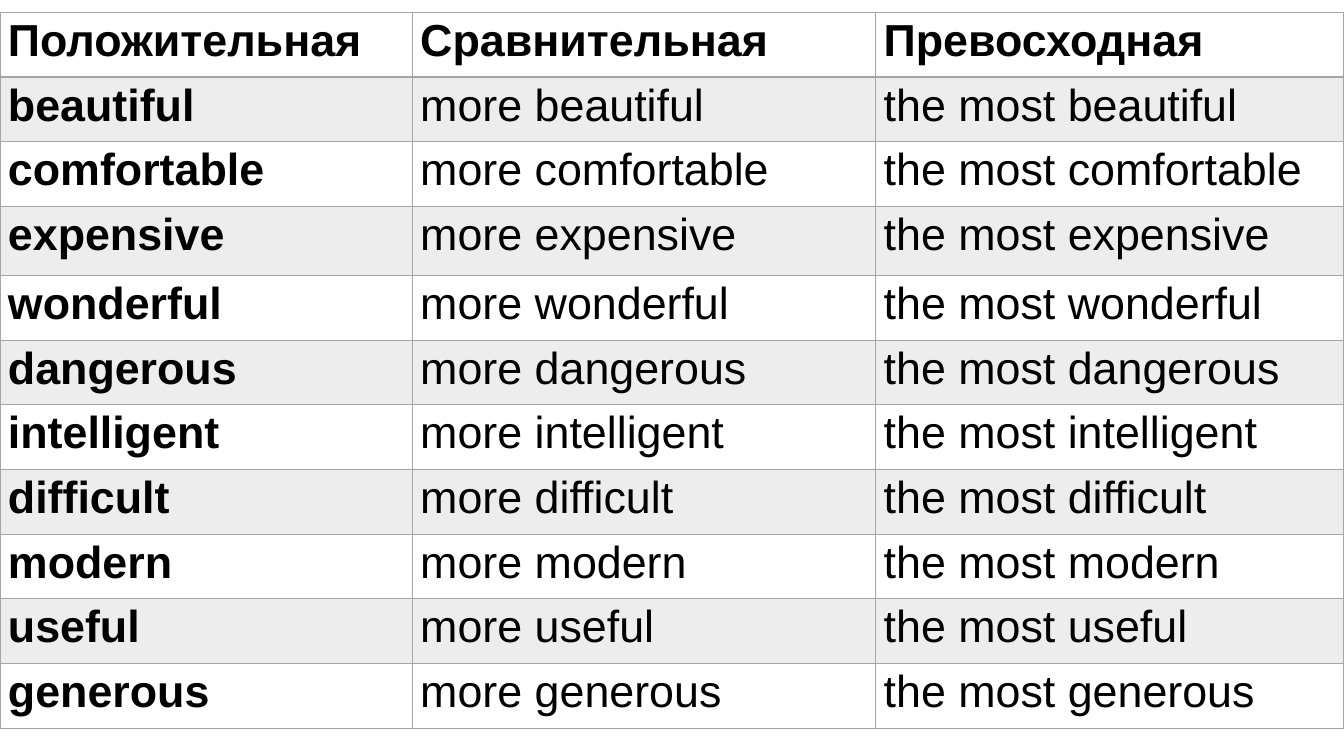
import pptx
import pptx.dml.color
import pptx.util
import lxml.etree

Cm, Pt = pptx.util.Cm, pptx.util.Pt

COLORS = {"text": "000000", "grey": "A5A5A5"}
HEADERS = ["Положительная", "Сравнительная", "Превосходная"]
ADJECTIVES = ["beautiful", "comfortable", "expensive", "wonderful", "dangerous",
              "intelligent", "difficult", "modern", "useful", "generous"]
COL_WIDTHS = [10.39, 11.68, 11.79]
ROW_HEIGHT, TALL_ROW_HEIGHT = 1.63, 1.74


class Deck:
    """Holds the text style and the current slide, and draws a banded table."""

    font, size, spacing, inset = "Arial", Pt(32), 1.07, Cm(0.2)

    def __init__(self, prs):
        self.s = prs.slides.add_slide(prs.slide_layouts[6])

    def color(self, name):
        return pptx.dml.color.RGBColor.from_string(COLORS[name])

    def child(self, parent, tag, **attrs):
        return lxml.etree.SubElement(parent, pptx.oxml.ns.qn(tag), attrs)

    def borders(self, cell, bottom):
        tcPr = cell._tc.get_or_add_tcPr()
        for side, width in (("L", 1), ("R", 1), ("T", 1), ("B", bottom)):
            ln = self.child(tcPr, f"a:ln{side}", w=str(Pt(width)))
            fill = self.child(ln, "a:solidFill")
            self.child(fill, "a:srgbClr", val=COLORS["grey"])

    def band(self, cell):
        cell.fill.solid()
        cell.fill.fore_color.rgb = self.color("grey")
        clr = cell._tc.tcPr.find(".//" + pptx.oxml.ns.qn("a:srgbClr") + "[last()]")
        clr = cell._tc.tcPr.find(pptx.oxml.ns.qn("a:solidFill"))[0]
        self.child(clr, "a:alpha", val="20000")

    def cell(self, cell, text, bold, banded, bottom, right):
        cell.margin_left, cell.margin_right = self.inset, right
        cell.margin_top = cell.margin_bottom = 0
        self.borders(cell, bottom)
        if banded:
            self.band(cell)
        else:
            cell.fill.background()
        p = cell.text_frame.paragraphs[0]
        p.text = text
        p.line_spacing = self.spacing
        p.font.name, p.font.size, p.font.bold = self.font, self.size, bold
        p.font.color.rgb = self.color("text")

    def table(self, left, top, widths, heights, rows):
        shape = self.s.shapes.add_table(len(rows), len(widths), Cm(left), Cm(top),
                                        Cm(sum(widths)), Cm(sum(heights)))
        table = shape.table
        table.first_row = table.horz_banding = False
        for column, width in zip(table.columns, widths):
            column.width = Cm(width)
        for row, height in zip(table.rows, heights):
            row.height = Cm(height)
        for i, texts in enumerate(rows):
            for j, text in enumerate(texts):
                self.cell(table.cell(i, j), text, bold=i == 0 or j == 0,
                          banded=i % 2 == 1, bottom=2 if i == 0 else 1,
                          right=self.inset if j == len(widths) - 1 else 0)


def main():
    prs = pptx.Presentation()
    prs.slide_width, prs.slide_height = Cm(33.87), Cm(19.05)
    rows = [HEADERS] + [[a, f"more {a}", f"the most {a}"] for a in ADJECTIVES]
    heights = [TALL_ROW_HEIGHT if row[0] == "expensive" else ROW_HEIGHT for row in rows]
    Deck(prs).table(0, 0.31, COL_WIDTHS, heights, rows)
    prs.save("out.pptx")


if __name__ == "__main__":
    main()
